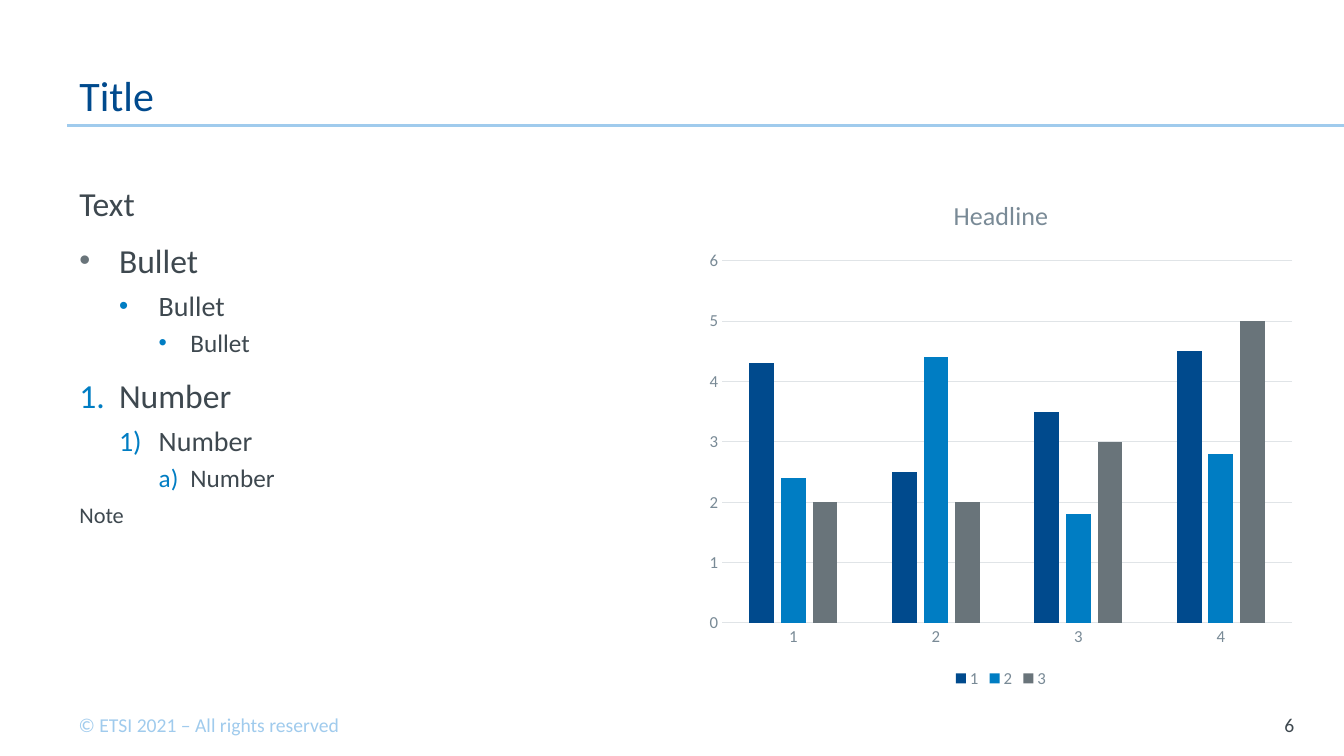
from lxml import etree
from pptx import Presentation
from pptx.chart.data import CategoryChartData
from pptx.dml.color import RGBColor
from pptx.enum.chart import XL_CHART_TYPE as ChartType, XL_LEGEND_POSITION as LegendPosition
from pptx.enum.chart import XL_TICK_MARK as TickMark
from pptx.enum.shapes import MSO_CONNECTOR as Connector
from pptx.enum.text import MSO_ANCHOR as Anchor, MSO_AUTO_SIZE as AutoSize, PP_ALIGN as Align
from pptx.oxml.ns import qn
from pptx.util import Cm, Pt

COLORS = {
    "navy": "004A8D", "blue": "007DC3", "sky": "A0CBED", "text": "3E484F",
    "gray": "69747A", "label": "798A96", "grid": "E0E4E7",
}


def set_font(font, size, color):
    font.name = "Calibri"
    font.size = Pt(size)
    font.bold = False
    font.color.rgb = RGBColor.from_string(COLORS[color])


def set_bullet(paragraph, marker, color, indent, hanging):
    """Give a paragraph a bullet character, a numbering scheme or no marker."""
    properties = paragraph._p.get_or_add_pPr()
    properties.set("marL", str(Cm(indent)))
    properties.set("indent", str(-Cm(hanging)))
    if marker is None:
        etree.SubElement(properties, qn("a:buNone"))
        return
    bullet_color = etree.SubElement(properties, qn("a:buClr"))
    etree.SubElement(bullet_color, qn("a:srgbClr"), val=COLORS[color])
    if marker == "•":
        etree.SubElement(properties, qn("a:buSzPct"), val="93000")
        etree.SubElement(properties, qn("a:buFont"), typeface="Arial")
        etree.SubElement(properties, qn("a:buChar"), char=marker)
    else:
        etree.SubElement(properties, qn("a:buFont"), typeface="+mj-lt")
        etree.SubElement(properties, qn("a:buAutoNum"), type=marker)


presentation = Presentation()
presentation.slide_width = Cm(33.87)
presentation.slide_height = Cm(19.05)
slide = presentation.slides.add_slide(presentation.slide_layouts[1])

# Rule under the title
rule = slide.shapes.add_connector(Connector.STRAIGHT, Cm(1.7), Cm(3.17), Cm(33.87), Cm(3.17))
rule.line.color.rgb = RGBColor.from_string(COLORS["sky"])
rule.line.width = Pt(2.25)
etree.SubElement(rule._element.spPr, qn("a:effectLst"))

# Title and body placeholders
title = slide.shapes.title
body = slide.placeholders[1]
for placeholder, top, width, height, anchor in [
    (title, 0.76, 26.47, 2.41, Anchor.BOTTOM),
    (body, 4.45, 15.29, 13, Anchor.TOP),
]:
    placeholder.left, placeholder.top = Cm(1.7), Cm(top)
    placeholder.width, placeholder.height = Cm(width), Cm(height)
    frame = placeholder.text_frame
    frame.auto_size = AutoSize.NONE
    frame.vertical_anchor = anchor
    frame.margin_left = frame.margin_right = Cm(0.3)
    frame.margin_top = frame.margin_bottom = Cm(0.15)

title.text_frame.text = "Title"
title_paragraph = title.text_frame.paragraphs[0]
title_paragraph.alignment = Align.LEFT
title_paragraph.line_spacing = Pt(30)
set_font(title_paragraph.font, 30, "navy")

# Text, size, space before, marker, marker colour, indent, hanging
body_lines = [
    ("Text", 24, 0, None, None, 0, 0),
    ("Bullet", 24, 12, "•", "gray", 1, 1),
    ("Bullet", 20, 6, "•", "blue", 2, 1),
    ("Bullet", 18, 4, "•", "blue", 2.8, 0.8),
    ("Number", 24, 12, "arabicPeriod", "blue", 1, 1),
    ("Number", 20, 6, "arabicParenR", "blue", 2, 1),
    ("Number", 18, 4, "alphaLcParenR", "blue", 2.8, 0.8),
    ("Note", 16, 6, None, None, 0, 0),
]
body.text_frame.text = "\n".join(line[0] for line in body_lines)
for level, (paragraph, line) in enumerate(zip(body.text_frame.paragraphs, body_lines)):
    _, size, space_before, marker, color, indent, hanging = line
    paragraph.level = level
    set_bullet(paragraph, marker, color, indent, hanging)
    paragraph.alignment = Align.LEFT
    paragraph.space_before = Pt(space_before)
    set_font(paragraph.font, size, "text")

# Footer and slide number
for text, left, top, width, height, color, alignment in [
    ("© ETSI 2021 – All rights reserved", 1.73, 17.83, 7.47, 0.86, "sky", Align.LEFT),
    ("6", 31.12, 17.75, 1.75, 1.02, "text", Align.RIGHT),
]:
    box = slide.shapes.add_textbox(Cm(left), Cm(top), Cm(width), Cm(height))
    frame = box.text_frame
    frame.word_wrap = True
    frame.vertical_anchor = Anchor.MIDDLE
    frame.text = text
    frame.paragraphs[0].alignment = alignment
    set_font(frame.paragraphs[0].font, 14, color)

# Column chart
chart_data = CategoryChartData()
chart_data.categories = ["1", "2", "3", "4"]
chart_data.add_series("1", (4.3, 2.5, 3.5, 4.5))
chart_data.add_series("2", (2.4, 4.4, 1.8, 2.8))
chart_data.add_series("3", (2, 2, 3, 5))
chart = slide.shapes.add_chart(
    ChartType.COLUMN_CLUSTERED, Cm(17.58), Cm(4.45), Cm(15.29), Cm(13), chart_data
).chart
set_font(chart.font, 10, "text")

chart.has_title = True
chart.chart_title.include_in_layout = False
chart.chart_title.text_frame.text = "Headline"
set_font(chart.chart_title.text_frame.paragraphs[0].font, 18.6, "label")

chart.has_legend = True
chart.legend.position = LegendPosition.BOTTOM
chart.legend.include_in_layout = False
set_font(chart.legend.font, 12, "label")

plot = chart.plots[0]
plot.vary_by_categories = False
plot.gap_width = 219
plot.overlap = -27
for series, color in zip(plot.series, ("navy", "blue", "gray")):
    series.format.fill.solid()
    series.format.fill.fore_color.rgb = RGBColor.from_string(COLORS[color])

value_axis, category_axis = chart.value_axis, chart.category_axis
for axis in (value_axis, category_axis):
    axis.major_tick_mark = axis.minor_tick_mark = TickMark.NONE
    set_font(axis.tick_labels.font, 12, "label")
value_axis.minimum_scale, value_axis.maximum_scale = 0, 6
value_axis.major_unit = 1
value_axis.format.line.fill.background()
for line in (value_axis.major_gridlines.format.line, category_axis.format.line):
    line.color.rgb = RGBColor.from_string(COLORS["grid"])
    line.width = Pt(0.75)

presentation.save("out.pptx")
